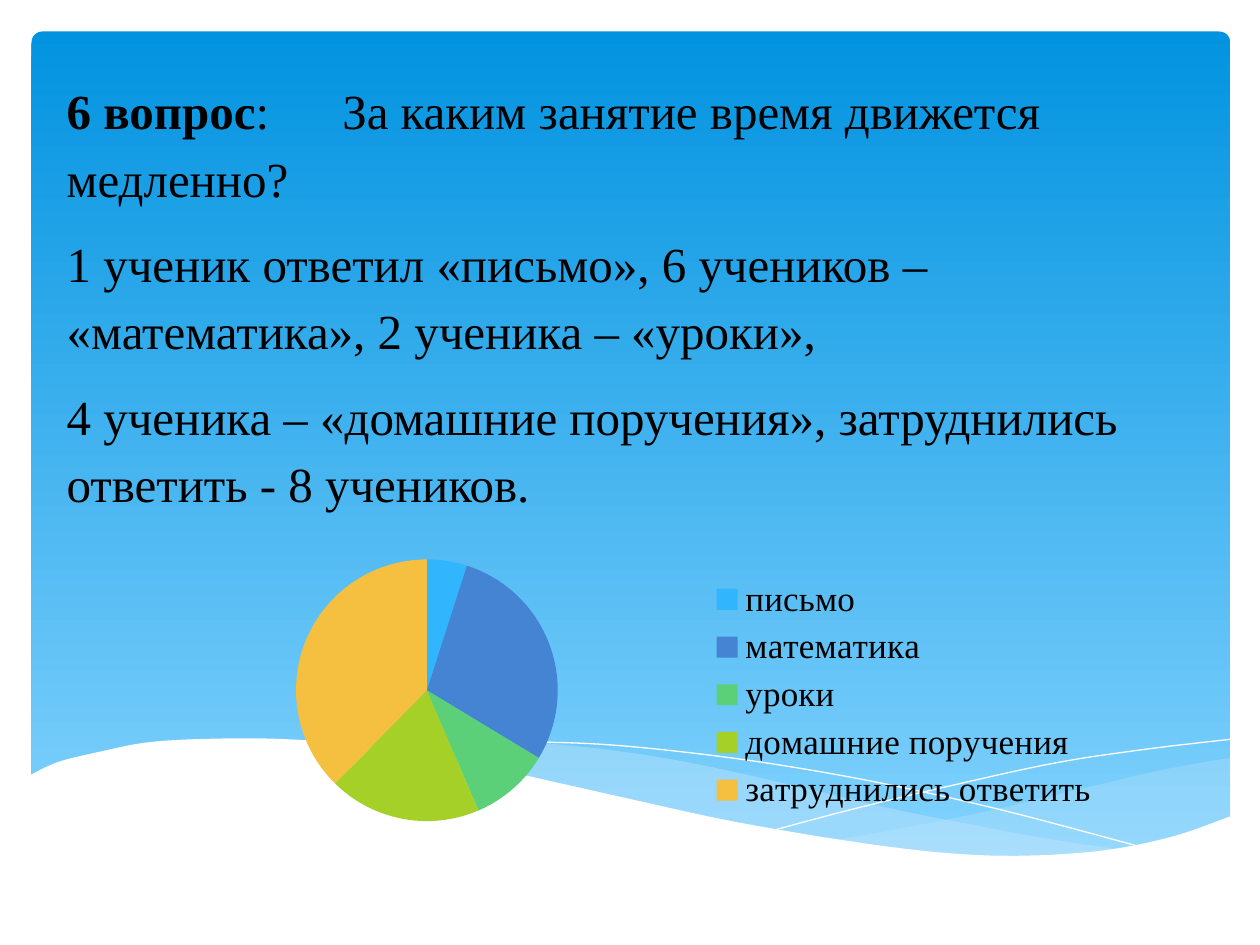
from lxml import etree
from pptx import Presentation
from pptx.chart.data import CategoryChartData
from pptx.dml.color import RGBColor
from pptx.enum.chart import XL_CHART_TYPE as ChartType, XL_LEGEND_POSITION as LegendPosition
from pptx.enum.shapes import MSO_SHAPE as Preset
from pptx.oxml import parse_xml
from pptx.oxml.ns import nsdecls, qn
from pptx.util import Pt

color = RGBColor.from_string
SERIF = "Times New Roman"


def smooth(knots, steps=8):
    """Sample a Catmull-Rom curve through the knots; two knots give a straight line."""
    padded = [knots[0], *knots, knots[-1]]
    samples = [knots[0]]
    for p0, p1, p2, p3 in zip(padded, padded[1:], padded[2:], padded[3:]):
        for step in range(1, steps + 1):
            t = step / steps
            samples.append(tuple(
                (2 * b + (c - a) * t + (2 * a - 5 * b + 4 * c - d) * t ** 2
                 + (3 * b - a - 3 * c + d) * t ** 3) / 2
                for a, b, c, d in zip(p0, p1, p2, p3)))
    return samples


def set_layout(element, x, y, width, height, inner=False):
    """Place a chart part by fractions of the chart area."""
    target = '<c:layoutTarget val="inner"/>' if inner else ""
    for old in element.findall(qn("c:layout")):
        element.remove(old)
    layout = parse_xml(
        f'<c:layout {nsdecls("c")}><c:manualLayout>{target}'
        '<c:xMode val="edge"/><c:yMode val="edge"/>'
        f'<c:x val="{x}"/><c:y val="{y}"/><c:w val="{width}"/><c:h val="{height}"/>'
        '</c:manualLayout></c:layout>')
    if inner:
        element.insert(0, layout)
    else:
        element.find(qn("c:legendPos")).addnext(layout)


presentation = Presentation()
presentation.slide_width, presentation.slide_height = Pt(720), Pt(540)
slide = presentation.slides.add_slide(presentation.slide_layouts[6])
shapes = slide.shapes

# Blue panel
panel = shapes.add_shape(Preset.ROUNDED_RECTANGLE, Pt(18), Pt(18), Pt(685), Pt(475))
panel.adjustments[0] = 0.013
panel.shadow.inherit = False
panel.line.fill.background()
panel.fill.gradient()
panel.fill.gradient_angle = 270
for stop, position, shade in zip(panel.fill.gradient_stops, (0, 1), ("0293E0", "83D3FE")):
    stop.position = position
    stop.color.rgb = color(shade)

# Waves: (curves, fill, opacity in percent); without a fill the wave is a white hairline
waves = [
    ([[(703, 433), (664, 440), (621, 450), (562, 464), (509, 474.5), (477, 480)],
      [(477, 480), (528, 486.5), (571, 489), (616, 488), (653, 483), (680, 476), (703, 467)]],
     "C6E7FC", 29),
    ([[(644, 486), (603, 480), (559, 472), (509, 462), (454, 449), (400, 437), (352, 429),
       (302, 424), (261, 422.5), (207, 427)],
      [(207, 427), (261, 435), (324, 449), (382, 462), (433, 473), (490, 482.5), (539, 488),
       (582, 489.5), (618, 489), (644, 486)]],
     "C6E7FC", 40),
    ([[(223, 430), (254, 425.5), (289, 424), (338, 425), (384, 429), (438, 436), (501, 447),
       (573, 463), (654, 484.5)]], None, 100),
    ([[(442, 474.5), (485, 463), (539, 450), (603, 436), (656, 428), (703, 422.5)]], None, 100),
    ([[(703, 466.5), (670, 478), (630, 486), (582, 489), (536, 487), (481, 480), (417, 469),
       (362, 457), (322, 448), (263, 435), (210, 426), (166, 422.5), (127, 422), (86, 424),
       (55, 430), (33, 435.5), (17, 443)],
      [(17, 526.5), (703, 526.5)]],
     "FFFFFF", 100),
]
for curves, fill, opacity in waves:
    outline = [(Pt(x), Pt(y)) for curve in curves for x, y in smooth(curve)]
    builder = shapes.build_freeform(*outline[0])
    builder.add_line_segments(outline[1:], close=fill is not None)
    wave = builder.convert_to_shape()
    wave.shadow.inherit = False
    if fill is None:
        wave.fill.background()
        wave.line.color.rgb = color("FFFFFF")
        wave.line.width = Pt(0)
        continue
    wave.line.fill.background()
    wave.fill.solid()
    wave.fill.fore_color.rgb = color(fill)
    if opacity < 100:
        fill_color = wave.fill._xPr.find(qn("a:solidFill"))[0]
        etree.SubElement(fill_color, qn("a:alpha")).set("val", str(opacity * 1000))

# Question and answers; a tab stop sets the gap after the heading
paragraphs = [
    [("6 вопрос", True), (":\tЗа каким занятие время движется медленно?", False)],
    [("1 ученик ответил «письмо», 6 учеников – «математика», 2 ученика – «уроки»,", False)],
    [("4 ученика – «домашние поручения», затруднились ответить - 8 учеников.", False)],
]
frame = shapes.add_textbox(Pt(31), Pt(37.5), Pt(663), Pt(261.5)).text_frame
frame.word_wrap = True
for index, runs in enumerate(paragraphs):
    paragraph = frame.add_paragraph() if index else frame.paragraphs[0]
    paragraph.line_spacing = 1.15
    paragraph.space_after = Pt(10)
    for text, bold in runs:
        run = paragraph.add_run()
        run.text = text
        run.font.name, run.font.size, run.font.bold = SERIF, Pt(28), bold
        run.font.color.rgb = color("000000")
tab_stops = etree.SubElement(frame.paragraphs[0]._p.get_or_add_pPr(), qn("a:tabLst"))
etree.SubElement(tab_stops, qn("a:tab"), pos=str(Pt(157.5)), algn="l")

# Pie chart of the answers
answers = [
    ("письмо", 5, "31B6FD"),
    ("математика", 29, "4584D3"),
    ("уроки", 10, "5BD078"),
    ("домашние поручения", 19, "A5D028"),
    ("затруднились ответить", 38, "F5C040"),
]
data = CategoryChartData()
data.categories = [name for name, value, shade in answers]
data.add_series("Series 1", [value for name, value, shade in answers])
chart = shapes.add_chart(ChartType.PIE, Pt(37), Pt(309.5), Pt(657), Pt(170), data).chart
chart.has_title = False
chart.font.name, chart.font.size = "Cabin", Pt(10)
chart.font.color.rgb = color("000000")
plot = chart.plots[0]
plot.vary_by_categories = True
for index, (name, value, shade) in enumerate(answers):
    point = plot.series[0].points[index]
    point.format.fill.solid()
    point.format.fill.fore_color.rgb = color(shade)
    point.format.line.fill.background()
chart.has_legend = True
legend = chart.legend
legend.position = LegendPosition.RIGHT
legend.include_in_layout = False
legend.font.name, legend.font.size = SERIF, Pt(20)
legend.font.color.rgb = color("000000")
plot_area = chart._chartSpace.chart.plotArea
set_layout(plot_area, 0.2, 0.06, 0.23, 0.88, inner=True)
set_layout(legend._element, 0.55, 0.1, 0.36, 0.83)

presentation.save("out.pptx")
